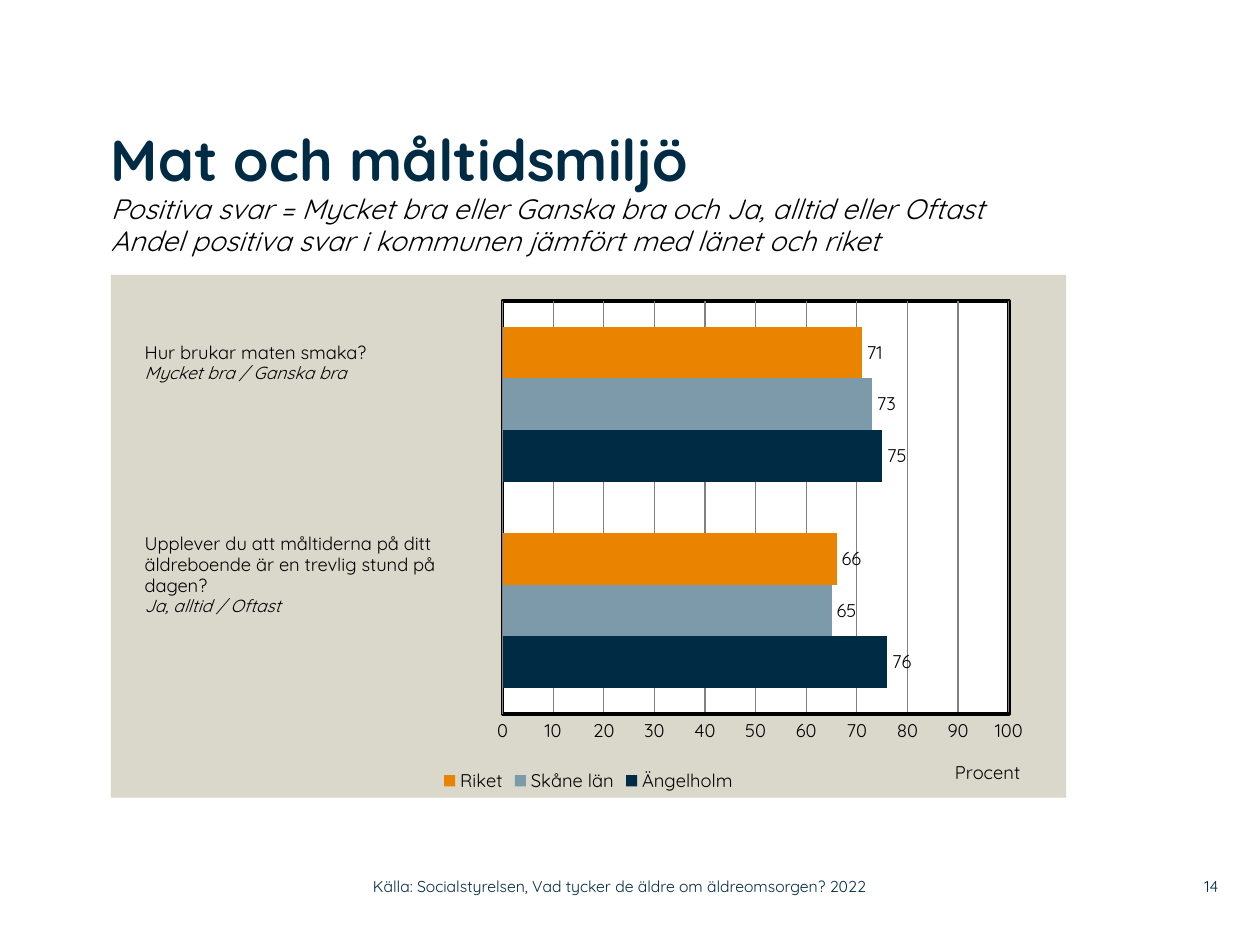
import pptx
import pptx.chart.data
import pptx.dml.color
import pptx.enum.chart
import pptx.enum.text
import pptx.oxml
import pptx.oxml.ns
import pptx.util

Pt = pptx.util.Pt
FONT = "Quicksand"
COLORS = {
    "navy": "002B45", "blue": "7D9AAA", "orange": "E98300",
    "sand": "DAD7CB", "white": "FFFFFF", "black": "000000", "grid": "808080",
}
SERIES = [
    ("Ängelholm", (76, 75), "navy"),
    ("Skåne län", (65, 73), "blue"),
    ("Riket", (66, 71), "orange"),
]


def rgb(name):
    return pptx.dml.color.RGBColor.from_string(COLORS[name])


def style(font, size, color="black", bold=False, italic=False):
    font.name, font.size = FONT, Pt(size)
    font.bold, font.italic = bold, italic
    font.color.rgb = rgb(color)


def paint(fill, color):
    fill.solid()
    fill.fore_color.rgb = rgb(color)


def stroke(line, color, width):
    line.color.rgb = rgb(color)
    line.width = Pt(width)


def add_box(slide, box, inset=True):
    shape = slide.shapes.add_textbox(*map(Pt, box))
    frame = shape.text_frame
    frame.word_wrap = True
    if not inset:
        frame.margin_left = frame.margin_right = 0
        frame.margin_top = frame.margin_bottom = 0
    return frame


def add_title(slide, box, head, lines):
    frame = add_box(slide, box, inset=False)
    para = frame.paragraphs[0]
    para.line_spacing = 0.95
    run = para.add_run()
    run.text = head
    style(run.font, 33, "navy", bold=True)
    for line in lines:
        para.add_line_break()
        run = para.add_run()
        run.text = line
        style(run.font, 16, italic=True)


def add_label(slide, box, lines, answer):
    """Question lines, then the positive answers in italics."""
    frame = add_box(slide, box)
    frame.text = "\n".join([*lines, answer])
    for para in frame.paragraphs:
        para.line_spacing = 0.95
        style(para.font, 10.5)
    style(frame.paragraphs[-1].font, 10, italic=True)


def add_foot(slide, box, text, align):
    frame = add_box(slide, box, inset=False)
    frame.vertical_anchor = pptx.enum.text.MSO_ANCHOR.MIDDLE
    para = frame.paragraphs[0]
    para.text, para.alignment = text, align
    style(para.font, 9, "navy")


def make_xml(body):
    space = pptx.oxml.ns.nsdecls("c", "a")
    return pptx.oxml.parse_xml(body.replace(">", f" {space}>", 1))


def make_place(inner=False, **place):
    """Layout in fractions of the chart area."""
    tags = '<c:layoutTarget val="inner"/>' if inner else ""
    tags += "".join(f'<c:{key}Mode val="edge"/>' for key in "xy")
    tags += "".join(f'<c:{key} val="{val}"/>' for key, val in place.items())
    return make_xml(
        f"<c:layout><c:manualLayout>{tags}</c:manualLayout></c:layout>")


def set_place(parent, place, index):
    for old in parent.findall(pptx.oxml.ns.qn("c:layout")):
        parent.remove(old)
    parent.insert(index, place)


def set_axes(chart):
    chart.category_axis.visible = False
    axis = chart.value_axis
    axis.minimum_scale, axis.maximum_scale, axis.major_unit = 0, 100, 10
    axis.major_tick_mark = pptx.enum.chart.XL_TICK_MARK.NONE
    axis.has_major_gridlines = True
    stroke(axis.major_gridlines.format.line, "grid", 0.75)
    stroke(axis.format.line, "black", 2)
    style(axis.tick_labels.font, 10.5)
    title = axis.axis_title
    title.text_frame.text = "Procent"
    style(title.text_frame.paragraphs[0].font, 10.5)
    set_place(title._element, make_place(x=0.88, y=0.92), 1)


def set_areas(chart):
    """Backgrounds of the chart and of its plot, and the plot's place."""
    def props(color, line):
        return make_xml(
            f'<c:spPr><a:solidFill><a:srgbClr val="{COLORS[color]}"/>'
            f"</a:solidFill>{line}</c:spPr>")

    space = chart._chartSpace
    plot = space.chart.plotArea
    set_place(plot, make_place(True, x=0.41, y=0.05, w=0.53, h=0.79), 0)
    frame = ('<a:ln w="25400"><a:solidFill><a:srgbClr '
             f'val="{COLORS["black"]}"/></a:solidFill></a:ln>')
    plot.append(props("white", frame))
    space.chart.addnext(props("sand", "<a:ln><a:noFill/></a:ln>"))


def add_bars(slide, box):
    data = pptx.chart.data.CategoryChartData()
    data.categories = ["1", "2"]
    for name, vals, _ in SERIES:
        data.add_series(name, vals)
    kind = pptx.enum.chart.XL_CHART_TYPE.BAR_CLUSTERED
    chart = slide.shapes.add_chart(kind, *map(Pt, box), data).chart
    style(chart.font, 10.5)
    chart.has_title = False
    chart.has_legend = True
    chart.legend.position = pptx.enum.chart.XL_LEGEND_POSITION.BOTTOM
    chart.legend.include_in_layout = False
    style(chart.legend.font, 10.5)
    plot = chart.plots[0]
    plot.gap_width, plot.overlap = 100, 0
    plot.vary_by_categories = False
    for bar, (_, _, color) in zip(plot.series, SERIES):
        paint(bar.format.fill, color)
        labels = bar.data_labels
        labels.show_value = True
        labels.position = pptx.enum.chart.XL_LABEL_POSITION.OUTSIDE_END
        style(labels.font, 10.5)
    set_axes(chart)
    set_areas(chart)


def main():
    deck = pptx.Presentation()
    deck.slide_width, deck.slide_height = Pt(720), Pt(540)
    slide = deck.slides.add_slide(deck.slide_layouts[6])
    add_title(slide, (63.4, 73.4, 606, 83.5), "Mat och måltidsmiljö", [
        "Positiva svar = Mycket bra eller Ganska bra och Ja, alltid eller Oftast",
        "Andel positiva svar i kommunen jämfört med länet och riket",
    ])
    add_bars(slide, (63.4, 157, 545.8, 298.8))
    add_label(slide, (75.6, 192.2, 199.4, 45.4),
              ["Hur brukar maten smaka?"], "Mycket bra / Ganska bra")
    add_label(slide, (75.6, 301.7, 199.4, 70.6), [
        "Upplever du att måltiderna på ditt äldreboende är en trevlig stund på",
        "dagen?",
    ], "Ja, alltid / Oftast")
    align = pptx.enum.text.PP_ALIGN
    add_foot(slide, (213.1, 496.1, 319, 20.9),
             "Källa: Socialstyrelsen, Vad tycker de äldre om äldreomsorgen? 2022",
             align.LEFT)
    add_foot(slide, (662.4, 496.1, 33.8, 20.9), "14", align.RIGHT)
    deck.save("out.pptx")


if __name__ == "__main__":
    main()
